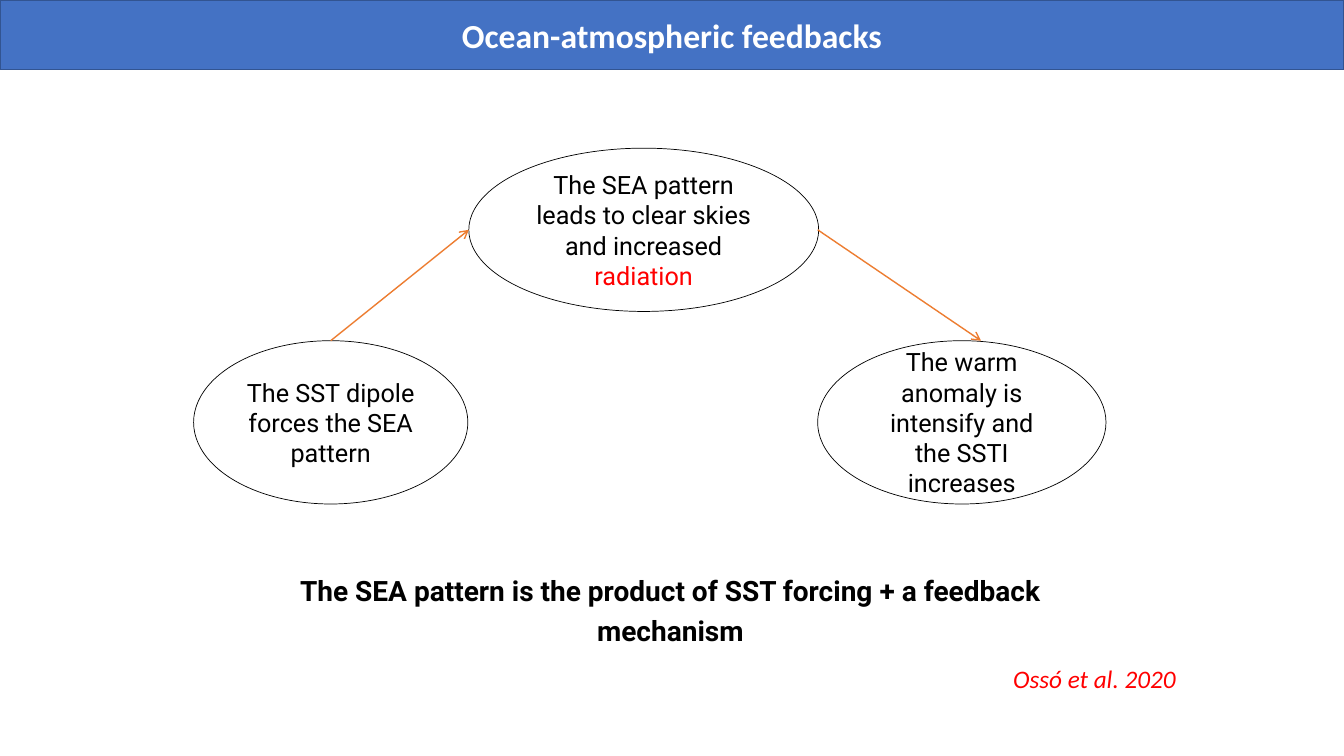
import pptx
import pptx.util
import pptx.dml.color
import pptx.enum.shapes
import pptx.enum.text
import pptx.oxml
import pptx.oxml.ns
from dataclasses import dataclass

Inches = pptx.util.Inches
Pt = pptx.util.Pt
ALIGN = pptx.enum.text.PP_ALIGN
ANCHOR = pptx.enum.text.MSO_ANCHOR


@dataclass(frozen=True)
class Theme:
    ink: str = "000000"
    paper: str = "FFFFFF"
    accent: str = "FF0000"
    band: str = "4472C4"
    edge: str = "325491"
    arrow: str = "ED7D31"
    head: str = "Calibri"
    body: str = "Roboto"
    big: int = 24
    mid: int = 20
    small: int = 18


theme = Theme()


def color(code):
    return pptx.dml.color.RGBColor.from_string(code)


def box(*sides):
    return [Inches(side) for side in sides]


def stroke(line, code, width):
    line.color.rgb = color(code)
    line.width = Pt(width)


def write(frame, runs, font, size, align, anchor=ANCHOR.TOP, space=1.0,
          bold=False, italic=False):
    """Fill a frame with one paragraph of (text, colour) runs."""
    frame.word_wrap = True
    frame.auto_size = pptx.enum.text.MSO_AUTO_SIZE.NONE
    frame.vertical_anchor = anchor
    para = frame.paragraphs[0]
    para.alignment = align
    para.line_spacing = space
    for text, code in runs:
        run = para.add_run()
        run.text = text
        run.font.name = font
        run.font.size = Pt(size)
        run.font.bold = bold
        run.font.italic = italic
        run.font.color.rgb = color(code)


def banner(slide, text):
    title = slide.shapes.title
    title.left, title.top, title.width, title.height = box(0, 0, 13.33, 0.69)
    title.fill.solid()
    title.fill.fore_color.rgb = color(theme.band)
    stroke(title.line, theme.edge, 1)
    write(title.text_frame, [(text, theme.paper)], theme.head, theme.big,
          ALIGN.CENTER, ANCHOR.MIDDLE, bold=True)


def bubble(slide, left, top, width, runs):
    oval = slide.shapes.add_shape(pptx.enum.shapes.MSO_SHAPE.OVAL,
                                  *box(left, top, width, 1.62))
    oval.shadow.inherit = False
    oval.fill.background()
    stroke(oval.line, theme.ink, 0.5)
    write(oval.text_frame, runs, theme.body, theme.small,
          ALIGN.CENTER, ANCHOR.MIDDLE)


def arrow(slide, *ends):
    link = slide.shapes.add_connector(
        pptx.enum.shapes.MSO_CONNECTOR.STRAIGHT, *box(*ends))
    stroke(link.line, theme.arrow, 1)
    # Open arrowhead at the far end, and no shadow
    tail = pptx.oxml.parse_xml(
        '<a:tailEnd %s type="arrow"/>' % pptx.oxml.ns.nsdecls("a"))
    link.get_or_add_ln().append(tail)
    plain = pptx.oxml.parse_xml(
        "<a:effectLst %s/>" % pptx.oxml.ns.nsdecls("a"))
    link.element.spPr.append(plain)


def label(slide, place, runs, font, size, align, **style):
    text = slide.shapes.add_textbox(*box(*place))
    write(text.text_frame, runs, font, size, align, **style)


def main():
    deck = pptx.Presentation()
    deck.slide_width, deck.slide_height = box(13.33, 7.5)
    slide = deck.slides.add_slide(deck.slide_layouts[5])

    # Heading
    banner(slide, "Ocean-atmospheric feedbacks")

    # Feedback chain
    high, low = 1.47, 3.38
    bubble(slide, 1.92, low, 2.72,
           [("The SST dipole forces the SEA pattern", theme.ink)])
    bubble(slide, 4.65, high, 3.47,
           [("The SEA pattern leads to clear skies and increased ", theme.ink),
            ("radiation", theme.accent)])
    bubble(slide, 8.11, low, 2.86,
           [("The warm anomaly is intensify and the SSTI increases",
             theme.ink)])
    arrow(slide, 3.28, low, 4.65, 2.28)
    arrow(slide, 8.11, 2.28, 9.73, low)

    # Conclusion and citation
    label(slide, (2.33, 5.57, 8.64, 0.9),
          [("The SEA pattern is the product of SST forcing + a feedback "
            "mechanism", theme.ink)],
          theme.body, theme.mid, ALIGN.CENTER, space=1.2, bold=True)
    label(slide, (9.95, 6.53, 2.26, 0.4),
          [("Ossó et al. 2020", theme.accent)],
          theme.head, theme.small, ALIGN.LEFT, italic=True)

    deck.save("out.pptx")


if __name__ == "__main__":
    main()
